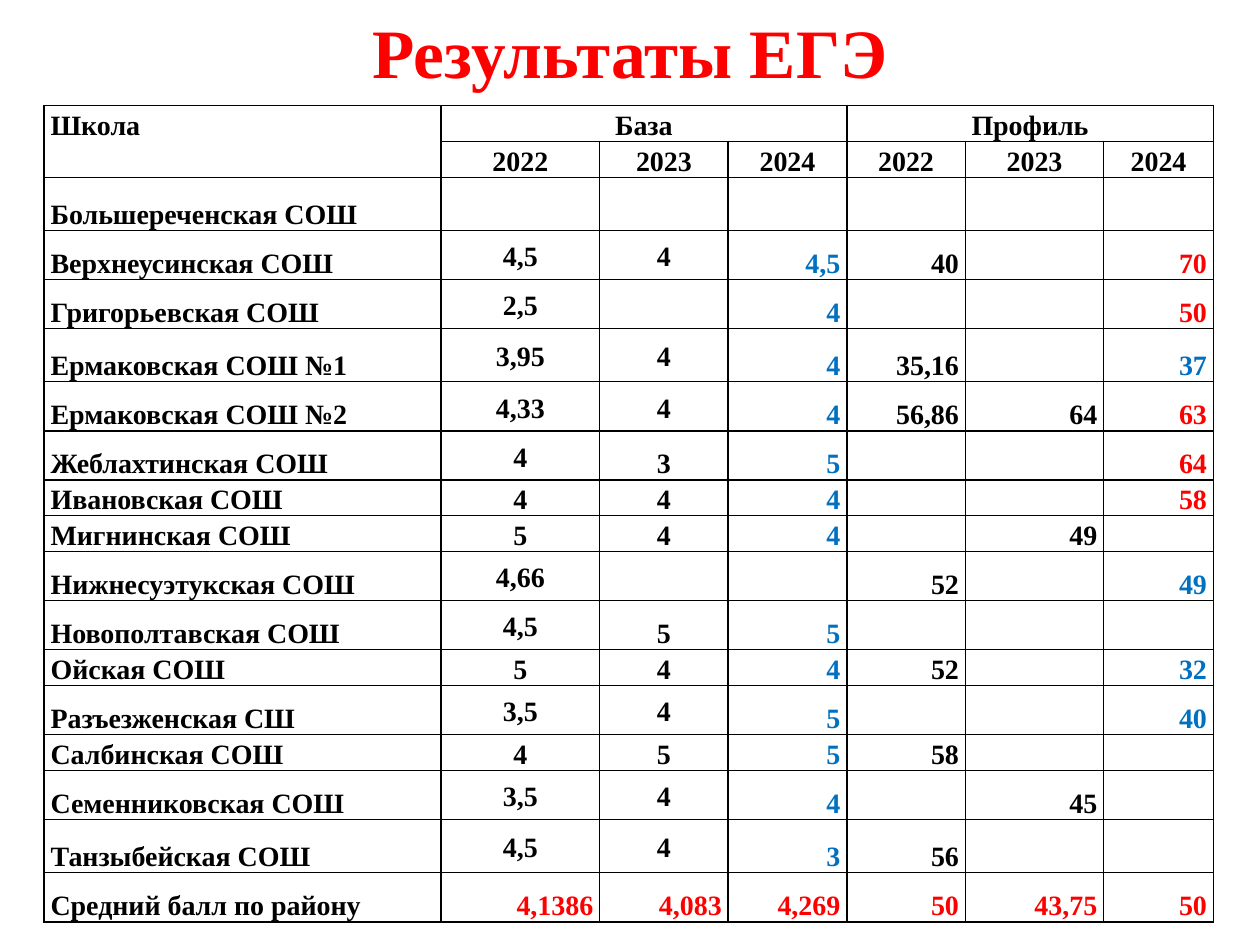
from lxml.etree import SubElement
from pptx import Presentation
from pptx.dml.color import RGBColor
from pptx.enum.text import MSO_ANCHOR, PP_ALIGN
from pptx.oxml.ns import qn
from pptx.util import Cm, Pt

FONT = "Times New Roman"
COLORS = {"black": "000000", "red": "FF0000", "blue": "0070C0"}
COLUMN_WIDTHS = [8, 3.2, 2.59, 2.39, 2.39, 2.79, 2.21]
SHORT, NORMAL, TALL = 0.58, 0.99, 1.07
YEARS = ["2022", "2023", "2024"]
PASS_MARK = 50  # profile results from this mark up are red

# Row height, school, base 2022-2024, profile 2022-2024
SCHOOLS = [
    (TALL, "Большереченская СОШ", "", "", "", "", "", ""),
    (NORMAL, "Верхнеусинская СОШ", "4,5", "4", "4,5", "40", "", "70"),
    (NORMAL, "Григорьевская СОШ", "2,5", "", "4", "", "", "50"),
    (TALL, "Ермаковская СОШ №1", "3,95", "4", "4", "35,16", "", "37"),
    (NORMAL, "Ермаковская СОШ №2", "4,33", "4", "4", "56,86", "64", "63"),
    (NORMAL, "Жеблахтинская СОШ", "4", "3", "5", "", "", "64"),
    (SHORT, "Ивановская СОШ", "4", "4", "4", "", "", "58"),
    (SHORT, "Мигнинская СОШ", "5", "4", "4", "", "49", ""),
    (NORMAL, "Нижнесуэтукская СОШ", "4,66", "", "", "52", "", "49"),
    (NORMAL, "Новополтавская СОШ", "4,5", "5", "5", "", "", ""),
    (SHORT, "Ойская СОШ", "5", "4", "4", "52", "", "32"),
    (NORMAL, "Разъезженская СШ", "3,5", "4", "5", "", "", "40"),
    (SHORT, "Салбинская СОШ", "4", "5", "5", "58", "", ""),
    (NORMAL, "Семенниковская СОШ", "3,5", "4", "4", "", "45", ""),
    (TALL, "Танзыбейская СОШ", "4,5", "4", "3", "56", "", ""),
]
AVERAGE = (NORMAL, "Средний балл по району",
           "4,1386", "4,083", "4,269", "50", "43,75", "50")
LOW_2023 = {"Жеблахтинская СОШ", "Ивановская СОШ", "Мигнинская СОШ",
            "Новополтавская СОШ"}  # base 2023 stands at the cell bottom


def add_span(para, text, size, color):
    span = para.add_run()
    span.text = text
    span.font.name = FONT
    span.font.size = Pt(size)
    span.font.bold = True
    span.font.color.rgb = RGBColor.from_string(COLORS[color])


def add_title(page, text):
    box = page.shapes.add_textbox(Cm(1.27), Cm(0.33), Cm(22.86), Cm(1.4))
    frame = box.text_frame
    frame.word_wrap = True
    frame.vertical_anchor = MSO_ANCHOR.MIDDLE
    para = frame.paragraphs[0]
    para.alignment = PP_ALIGN.CENTER
    add_span(para, text, 39.6, "red")


def format_cell(cell):
    """Black 1 pt borders, no fill, tight margins."""
    cell.margin_left = cell.margin_right = Cm(0.13)
    cell.margin_top = cell.margin_bottom = 0
    properties = cell._tc.get_or_add_tcPr()
    for side in ("lnL", "lnR", "lnT", "lnB"):
        line = SubElement(properties, qn(f"a:{side}"), w=str(Pt(1)))
        fill = SubElement(line, qn("a:solidFill"))
        SubElement(fill, qn("a:srgbClr"), val=COLORS["black"])
    cell.fill.background()


def write_cell(cell, text, align=PP_ALIGN.LEFT, anchor=MSO_ANCHOR.BOTTOM,
               color="black"):
    para = cell.text_frame.paragraphs[0]
    para.line_spacing = 1.15
    if not text:
        # Keeps an empty cell from stretching a short row
        SubElement(para._p, qn("a:endParaRPr"), sz="1600")
        return
    para.alignment = align
    cell.vertical_anchor = anchor
    add_span(para, text, 16, color)


def write_header(table):
    top = MSO_ANCHOR.TOP
    table.cell(0, 0).merge(table.cell(1, 0))
    write_cell(table.cell(0, 0), "Школа", anchor=top)
    for first, name in ((1, "База"), (4, "Профиль")):
        table.cell(0, first).merge(table.cell(0, first + 2))
        write_cell(table.cell(0, first), name, PP_ALIGN.CENTER, top)
        for column, year in enumerate(YEARS, first):
            write_cell(table.cell(1, column), year, PP_ALIGN.CENTER, top)


def result_style(school, column, text):
    """Alignment, anchor and colour of a school's result."""
    if column <= 2:
        low = column == 2 and school in LOW_2023
        anchor = MSO_ANCHOR.BOTTOM if low else MSO_ANCHOR.MIDDLE
        return PP_ALIGN.CENTER, anchor, "black"
    color = "black"
    if column == 3:
        color = "blue"
    elif column == 6 and text:
        color = "red" if int(text) >= PASS_MARK else "blue"
    return PP_ALIGN.RIGHT, MSO_ANCHOR.BOTTOM, color


def add_results(page):
    heights = [SHORT, SHORT] + [row[0] for row in SCHOOLS + [AVERAGE]]
    table = page.shapes.add_table(
        len(heights), len(COLUMN_WIDTHS), Cm(0.89), Cm(2.13),
        Cm(sum(COLUMN_WIDTHS)), Cm(sum(heights))).table
    table.first_row = table.horz_banding = False
    for column, width in zip(table.columns, COLUMN_WIDTHS):
        column.width = Cm(width)
    for row, height in zip(table.rows, heights):
        row.height = Cm(height)
    for cell in table.iter_cells():
        format_cell(cell)

    write_header(table)
    # Schools
    for row, (_, school, *results) in enumerate(SCHOOLS, 2):
        write_cell(table.cell(row, 0), school)
        for column, text in enumerate(results, 1):
            write_cell(table.cell(row, column), text,
                       *result_style(school, column, text))
    # District average
    last = len(heights) - 1
    write_cell(table.cell(last, 0), AVERAGE[1])
    for column, text in enumerate(AVERAGE[2:], 1):
        write_cell(table.cell(last, column), text, PP_ALIGN.RIGHT, color="red")


def main():
    deck = Presentation()
    deck.slide_width, deck.slide_height = Cm(25.4), Cm(19.05)
    page = deck.slides.add_slide(deck.slide_layouts[6])
    add_results(page)
    add_title(page, "Результаты ЕГЭ")
    deck.save("out.pptx")


if __name__ == "__main__":
    main()
